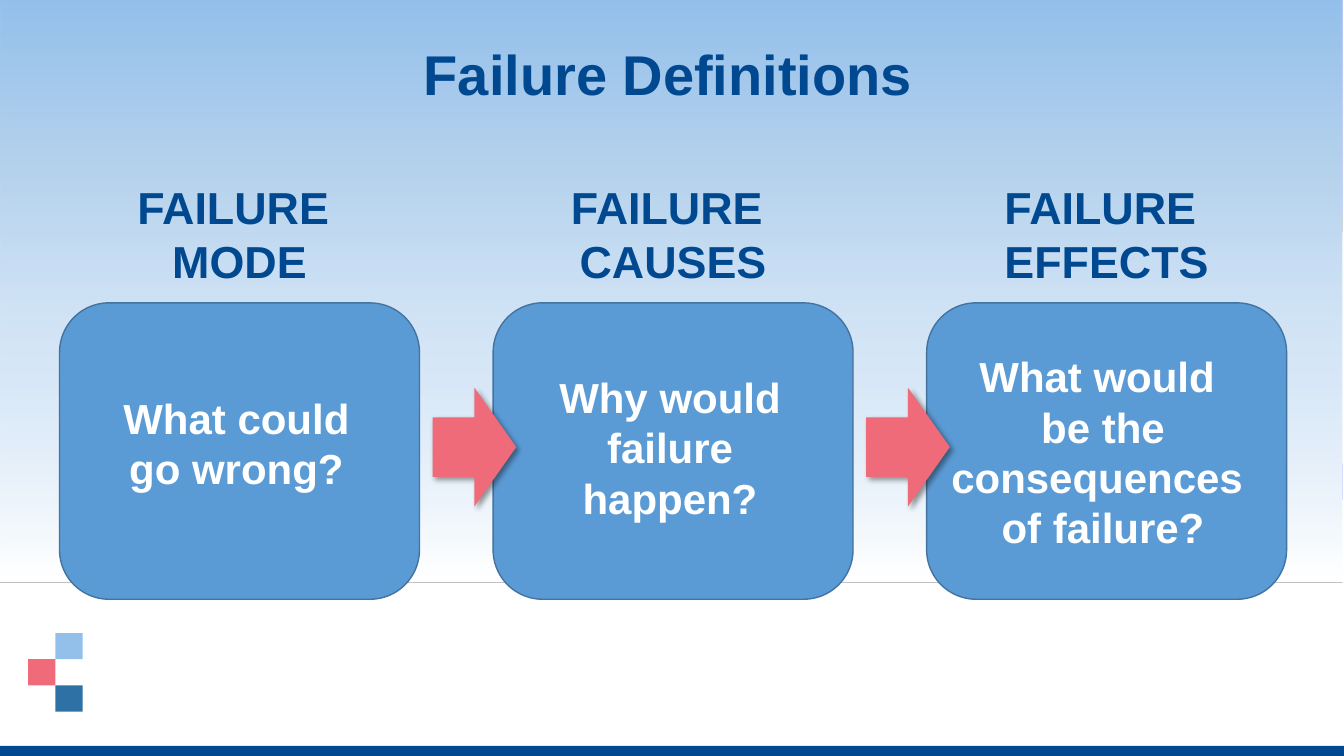
from lxml.etree import SubElement
from pptx import Presentation
from pptx.dml.color import RGBColor
from pptx.enum.shapes import MSO_SHAPE
from pptx.enum.text import MSO_ANCHOR, MSO_AUTO_SIZE, PP_ALIGN
from pptx.oxml.ns import qn
from pptx.util import Inches, Pt

SLIDE_WIDTH, SLIDE_HEIGHT = Inches(13.33), Inches(7.5)

NAVY = RGBColor(0x00, 0x49, 0x91)
SKY = RGBColor(0x93, 0xBF, 0xEB)
STEEL = RGBColor(0x2E, 0x72, 0xA5)
CORAL = RGBColor(0xEF, 0x6B, 0x7A)
BOX_BLUE = RGBColor(0x5B, 0x9B, 0xD5)
BOX_EDGE = RGBColor(0x43, 0x73, 0x9E)
PALE = RGBColor(0xB5, 0xD2, 0xEC)
MIST = RGBColor(0xBC, 0xD7, 0xF2)
BLACK = RGBColor(0x00, 0x00, 0x00)
WHITE = RGBColor(0xFF, 0xFF, 0xFF)

# Position, colour and opacity, the first and last in percent
SKY_STOPS = [(0, SKY, 100), (29, PALE, 100), (54, MIST, 69), (99, WHITE, 100)]

# All lengths below are percent of the slide's width or height
COLUMN_START, COLUMN_PITCH, COLUMN_WIDTH = 4.43, 32.26, 26.78
HEADING_TOP, BOX_TOP, ARROW_TOP, QUESTION_TOP = 23.13, 40.07, 51.27, 51.2
HEADING_HEIGHT, BOX_HEIGHT, ARROW_HEIGHT, QUESTION_HEIGHT = 15.73, 39.2, 15.73, 14.8
QUESTION_RISE, QUESTION_LINE = 2.73, 6.73
ARROW_OFFSET, ARROW_WIDTH = 27.75, 6.23
LOGO_LEFT, LOGO_TOP, TILE_WIDTH, TILE_HEIGHT = 2.1, 83.73, 2.03, 3.47

# Heading, question, and the question's offset and width in its column
DEFINITIONS = [
    ("FAILURE \vMODE", "What could go wrong?", 2.1, 22.13),
    ("FAILURE \vCAUSES", "Why would failure happen?", 2.1, 22.13),
    ("FAILURE \vEFFECTS", "What would \vbe the consequences \vof failure?", -0.15, 26.55),
]
# Column, row and colour
TILES = [(1, 0, SKY), (1, 2, STEEL), (0, 1, CORAL)]


def area(left, top, width, height):
    """Turn percent of the slide's size into lengths."""
    return (int(SLIDE_WIDTH * left / 100), int(SLIDE_HEIGHT * top / 100),
            int(SLIDE_WIDTH * width / 100), int(SLIDE_HEIGHT * height / 100))


def column_left(column):
    return COLUMN_START + column * COLUMN_PITCH


def apply_format(target, values):
    for name, value in values.items():
        setattr(target, name, value)


def add_color(parent, color, opacity):
    element = SubElement(parent, qn("a:srgbClr"), val=str(color))
    if opacity < 100:
        SubElement(element, qn("a:alpha"), val=str(opacity * 1000))


def add_panel(slide, kind, place, fill, edge=None):
    shape = slide.shapes.add_shape(kind, *area(*place))
    shape.shadow.inherit = False
    shape.fill.solid()
    shape.fill.fore_color.rgb = fill
    if edge is None:
        shape.line.fill.background()
    else:
        shape.line.color.rgb = edge
        shape.line.width = Pt(1)
    return shape


def add_sky(slide):
    """Add the backdrop that fades downwards to white."""
    shape = add_panel(slide, MSO_SHAPE.RECTANGLE, (0, 0, 100, 77.2), SKY)
    shape.fill.gradient()
    shape.fill.gradient_angle = 270
    stops = shape.element.spPr.find(qn("a:gradFill")).find(qn("a:gsLst"))
    for stop in list(stops):
        stops.remove(stop)
    for position, color, opacity in SKY_STOPS:
        add_color(SubElement(stops, qn("a:gs"), pos=str(position * 1000)), color, opacity)


def add_arrow(slide, column):
    place = (column_left(column) + ARROW_OFFSET, ARROW_TOP, ARROW_WIDTH, ARROW_HEIGHT)
    shape = add_panel(slide, MSO_SHAPE.RIGHT_ARROW, place, CORAL)
    effects = shape.element.spPr.find(qn("a:effectLst"))
    shadow = SubElement(effects, qn("a:outerShdw"), blurRad=str(Pt(4)),
                        dist=str(Pt(3)), dir=str(45 * 60000), rotWithShape="0")
    add_color(shadow, BLACK, 40)


def add_text(slide, place, text, size, color, **paragraph_values):
    frame = slide.shapes.add_textbox(*area(*place)).text_frame
    apply_format(frame, {"word_wrap": True, "auto_size": MSO_AUTO_SIZE.NONE,
                         "vertical_anchor": MSO_ANCHOR.TOP})
    paragraph = frame.paragraphs[0]
    paragraph.text = text
    apply_format(paragraph, {"alignment": PP_ALIGN.CENTER, **paragraph_values})
    for run in paragraph.runs:
        apply_format(run.font, {"name": "Arial", "size": Pt(size), "bold": True})
        run.font.color.rgb = color


def add_definition(slide, column, heading, question, offset, width):
    left = column_left(column)
    add_panel(slide, MSO_SHAPE.ROUNDED_RECTANGLE,
              (left, BOX_TOP, COLUMN_WIDTH, BOX_HEIGHT), BOX_BLUE, BOX_EDGE)
    if column > 0:
        add_arrow(slide, column - 1)
    add_text(slide, (left, HEADING_TOP, COLUMN_WIDTH, HEADING_HEIGHT), heading, 32, NAVY)
    add_text(slide, (left + offset, QUESTION_TOP - column * QUESTION_RISE, width,
                     QUESTION_HEIGHT + column * QUESTION_LINE), question, 30, WHITE)


def main():
    presentation = Presentation()
    apply_format(presentation, {"slide_width": SLIDE_WIDTH, "slide_height": SLIDE_HEIGHT})
    slide = presentation.slides.add_slide(presentation.slide_layouts[6])
    add_sky(slide)
    add_panel(slide, MSO_SHAPE.RECTANGLE, (0, 98.67, 100, 1.33), NAVY)
    for column, row, color in TILES:
        add_panel(slide, MSO_SHAPE.RECTANGLE,
                  (LOGO_LEFT + column * TILE_WIDTH, LOGO_TOP + row * TILE_HEIGHT,
                   TILE_WIDTH, TILE_HEIGHT), color)
    add_text(slide, (4.13, 5.6, 91.13, 11.07), "Failure Definitions", 40, NAVY,
             line_spacing=0.9, space_before=Pt(10))
    for column, definition in enumerate(DEFINITIONS):
        add_definition(slide, column, *definition)
    presentation.save("out.pptx")


if __name__ == "__main__":
    main()
